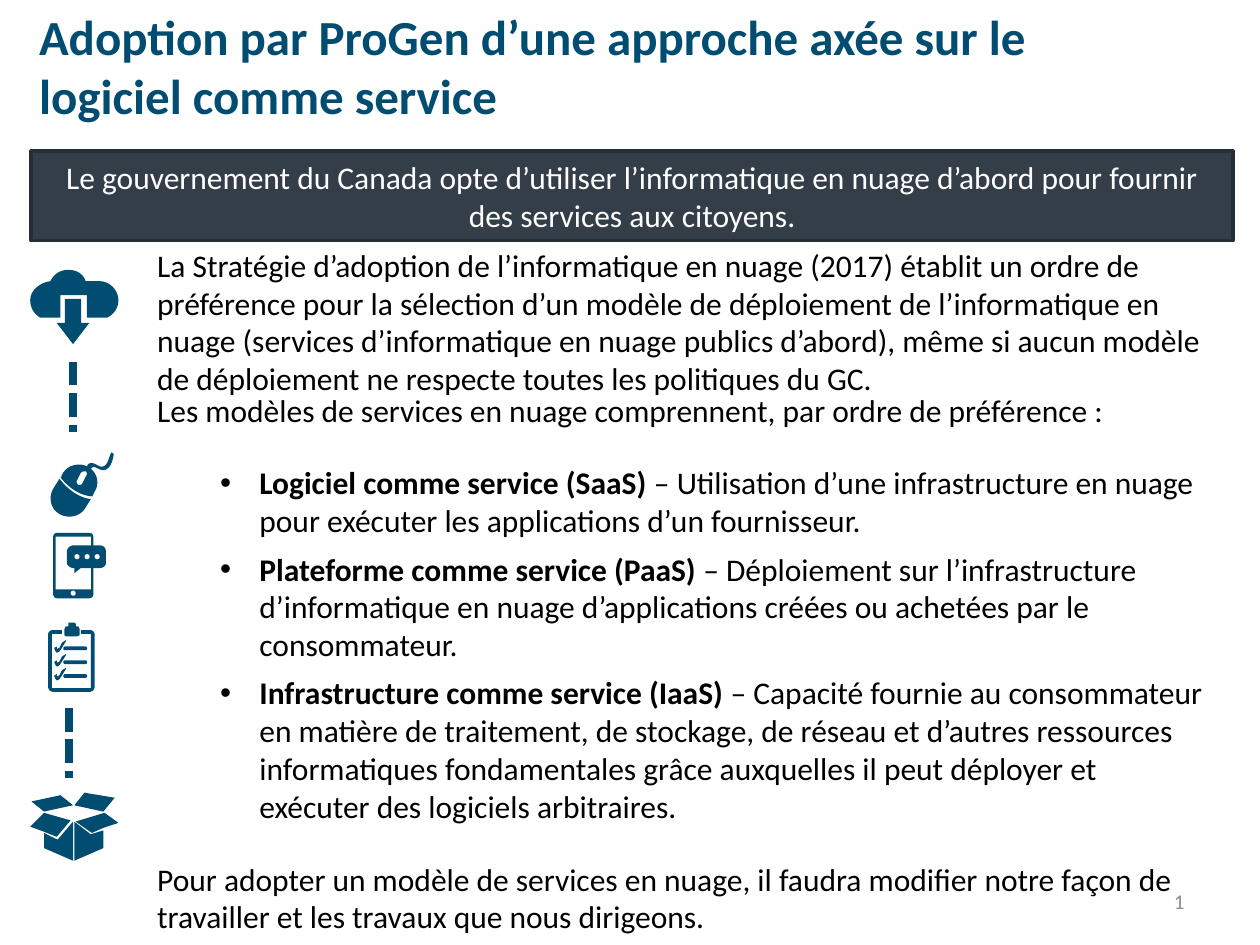
from lxml import etree
from pptx import Presentation
from pptx.dml.color import RGBColor
from pptx.enum.dml import MSO_LINE
from pptx.enum.shapes import MSO_CONNECTOR, MSO_SHAPE
from pptx.enum.text import MSO_ANCHOR, PP_ALIGN
from pptx.oxml.ns import qn
from pptx.util import Cm, Pt

RECT, ROUND = MSO_SHAPE.RECTANGLE, MSO_SHAPE.ROUNDED_RECTANGLE
OVAL, DOWN = MSO_SHAPE.OVAL, MSO_SHAPE.DOWN_ARROW
LEFT, MID, RIGHT = PP_ALIGN.LEFT, PP_ALIGN.CENTER, PP_ALIGN.RIGHT
TOP, CENTER = MSO_ANCHOR.TOP, MSO_ANCHOR.MIDDLE
STRAIGHT, DASH = MSO_CONNECTOR.STRAIGHT, MSO_LINE.SQUARE_DOT
FONT = "Calibri"
UNIT = Cm(0.0254)
COLORS = {"teal": "004D71", "dash": "004B6F", "slate": "333E48", "edge": "262E35",
          "white": "FFFFFF", "black": "000000", "gray": "8C8C8C"}

MODELS = [
    ("Logiciel comme service (SaaS)",
     " – Utilisation d’une infrastructure en nuage pour exécuter les applications d’un fournisseur."),
    ("Plateforme comme service (PaaS)",
     " – Déploiement sur l’infrastructure d’informatique en nuage d’applications créées ou achetées par le consommateur."),
    ("Infrastructure comme service (IaaS)",
     " – Capacité fournie au consommateur en matière de traitement, de stockage, de réseau et d’autres ressources "
     "informatiques fondamentales grâce auxquelles il peut déployer et exécuter des logiciels arbitraires."),
]


def color(name):
    return RGBColor.from_string(COLORS[name])


def style(par, size, tint, bold=False):
    for run in par.runs:
        font = run.font
        font.name, font.size, font.bold = FONT, Pt(size), bold
        font.color.rgb = color(tint)


def label(slide, box, text, size, tint, bold=False, align=LEFT, anchor=TOP, inset=True):
    frame = slide.shapes.add_textbox(*map(Cm, box)).text_frame
    frame.word_wrap = True
    frame.vertical_anchor = anchor
    if not inset:
        frame.margin_left = frame.margin_top = frame.margin_right = frame.margin_bottom = 0
    par = frame.paragraphs[0]
    par.text = text
    par.alignment = align
    style(par, size, tint, bold)
    return frame


def paint(shape, tint):
    shape.shadow.inherit = False
    shape.fill.solid()
    shape.fill.fore_color.rgb = color(tint)
    shape.line.fill.background()


def banner(slide, box, text):
    bar = slide.shapes.add_shape(RECT, *map(Cm, box))
    paint(bar, "slate")
    bar.line.color.rgb = color("edge")
    bar.line.width = Pt(2)
    frame = bar.text_frame
    frame.word_wrap = True
    frame.vertical_anchor = CENTER
    par = frame.paragraphs[0]
    par.text = text
    par.alignment = MID
    style(par, 18, "white")


def models(slide, box, intro, items, close):
    frame = label(slide, box, intro, 18, "black")
    frame.paragraphs[0].space_after = Pt(6)
    for i, (name, text) in enumerate(items):
        par = frame.add_paragraph()
        par.level = 1
        par.space_before = Pt(0 if i else 14)
        par.space_after = Pt(6)
        props = par._p.get_or_add_pPr()
        props.set("marL", str(Cm(2.06)))
        props.set("indent", str(-Cm(0.79)))
        etree.SubElement(props, qn("a:buFont")).set("typeface", "Arial")
        etree.SubElement(props, qn("a:buChar")).set("char", "•")
        par.add_run().text = name
        par.add_run().text = text
        style(par, 18, "black")
        par.runs[0].font.bold = True
    par = frame.add_paragraph()
    par.text = close
    par.space_before = Pt(14)
    style(par, 18, "black")


def trace(ring):
    points = [ring[0]]
    for step in ring[1:]:
        if len(step) == 2:
            points.append(step)
            continue
        curve = [points[-1], step[:2], step[2:4], step[4:]]
        for t in (k / 8 for k in range(1, 9)):
            mix = ((1 - t) ** 3, 3 * t * (1 - t) ** 2, 3 * t * t * (1 - t), t ** 3)
            points.append(tuple(sum(m * p[a] for m, p in zip(mix, curve)) for a in (0, 1)))
    return [(round(x * UNIT), round(y * UNIT)) for x, y in points]


def outline(group, x, y, *rings):
    lines = [trace(ring) for ring in rings]
    pen = group.shapes.build_freeform(*lines[0][0], scale=1.0)
    for i, line in enumerate(lines):
        if i:
            pen.move_to(*line[0])
        pen.add_line_segments(line[1:], close=True)
    paint(pen.convert_to_shape(Cm(x), Cm(y)), "teal")


def piece(group, x, y, kind, box, tint="teal"):
    left, top, wide, high = (round(n * UNIT) for n in box)
    shape = group.shapes.add_shape(kind, Cm(x) + left, Cm(y) + top, wide, high)
    paint(shape, tint)
    return shape


def cloud(slide, x, y):
    group = slide.shapes.add_group_shape()
    outline(group, x, y, [
        (8, 38), (3, 35, 0, 30, 0, 24), (0, 16, 8, 10, 16, 9), (19, 3, 24, 0, 30, 0),
        (37, 0, 42, 3, 44, 9), (55, 9), (63, 9, 70, 16, 70, 24), (70, 30, 67, 35, 61, 38),
        (45, 38), (45, 20), (24, 20), (24, 38)])
    arrow = piece(group, x, y, DOWN, (21, 23, 26, 36))
    arrow.adjustments[1] = 0.65


def mouse(slide, x, y):
    group = slide.shapes.add_group_shape()
    outline(group, x, y, [
        (9, 21), (4, 29), (0, 36, 2, 45, 9, 49), (16, 53, 25, 51, 29, 45),
        (34, 37), (30, 37, 19, 34, 9, 21)])
    outline(group, x, y, [
        (50, 0), (49, 3, 47, 8, 47, 8), (44, 14, 39, 10, 39, 10), (34, 7, 31, 9, 31, 11),
        (24, 8, 16, 10, 12, 16), (10, 20), (13, 24, 22, 34, 35, 35), (37, 31),
        (41, 25, 39, 17, 34, 13), (35, 11, 38, 12, 38, 12), (47, 18, 50, 9, 50, 9),
        (50, 9, 52, 5, 52, 1)],
        [(27, 25), (26, 26, 25, 26, 24, 26), (23, 25, 22, 23, 23, 22), (26, 16),
         (27, 15, 29, 15, 30, 15), (31, 16, 31, 18, 30, 19)])


def phone(slide, x, y):
    group = slide.shapes.add_group_shape()
    piece(group, x, y, ROUND, (0, 0, 32, 52)).adjustments[0] = 0.1
    piece(group, x, y, RECT, (2, 3, 28, 42), "white")
    piece(group, x, y, OVAL, (14, 46, 4, 4), "white")
    outline(group, x, y, [
        (37, 10), (16, 10), (14, 10, 11, 12, 11, 15), (11, 24), (11, 26, 14, 28, 16, 28),
        (17, 28), (17, 32), (22, 28), (37, 28), (40, 28, 42, 26, 42, 24), (42, 15),
        (42, 12, 40, 10, 37, 10)])
    for i in range(3):
        piece(group, x, y, OVAL, (17 + 8 * i, 17, 4, 4), "white")


def tasks(slide, x, y):
    group = slide.shapes.add_group_shape()
    outline(group, x, y, [
        (33, 6), (26, 6), (26, 9), (34, 9), (34, 52), (3, 52), (3, 9), (11, 9), (11, 6),
        (4, 6), (2, 6, 0, 7, 0, 10), (0, 51), (0, 53, 2, 55, 4, 55), (33, 55),
        (35, 55, 37, 53, 37, 51), (37, 10), (37, 7, 35, 6, 33, 6)])
    outline(group, x, y, [
        (14, 11), (23, 11), (25, 10), (25, 5), (24, 3), (22, 3), (22, 1), (21, 0),
        (16, 0), (16, 3), (14, 3), (13, 5), (13, 10)])
    tick = [(14, 15), (11, 20), (9, 23), (7, 24), (6, 23), (5, 21), (5, 20), (7, 19),
            (7, 21), (9, 20), (11, 16), (14, 14)]
    for drop in (0, 11, 22):
        piece(group, x, y, ROUND, (12, 19 + drop, 19, 3)).adjustments[0] = 0.5
        outline(group, x, y, [(a, b + drop) for a, b in tick])


def crate(slide, x, y):
    group = slide.shapes.add_group_shape()
    for ring in (
            [(35, 10), (43, 0), (67, 4), (58, 15)],
            [(1, 7), (11, 15), (34, 10), (24, 2)],
            [(22, 37), (21, 37), (11, 32), (11, 44), (34, 54), (34, 23)],
            [(11, 16), (0, 27), (11, 31), (21, 35), (32, 22)],
            [(35, 23), (35, 54), (58, 44), (58, 30), (48, 33)],
            [(59, 16), (36, 23), (49, 32), (58, 28), (70, 24)]):
        outline(group, x, y, ring)


def dashes(slide, x, y, high):
    line = slide.shapes.add_connector(STRAIGHT, Cm(x), Cm(y), Cm(x), Cm(y + high))
    line.line.color.rgb = color("dash")
    line.line.width = Pt(4.5)
    line.line.dash_style = DASH
    etree.SubElement(line._element.spPr, qn("a:effectLst"))


def main():
    deck = Presentation()
    deck.slide_width, deck.slide_height = Cm(25.4), Cm(19.05)
    slide = deck.slides.add_slide(deck.slide_layouts[6])
    label(slide, (18.21, 17.65, 5.92, 1.02), "1", 12, "gray", align=RIGHT, anchor=CENTER)
    label(slide, (0.79, 0.13, 21.11, 1.35),
          "Adoption par ProGen d’une approche axée sur le logiciel comme service",
          28, "teal", bold=True, inset=False)
    models(slide, (2.92, 7.75, 21.69, 11.38),
           "Les modèles de services en nuage comprennent, par ordre de préférence :", MODELS,
           "Pour adopter un modèle de services en nuage, il faudra modifier notre façon de "
           "travailler et les travaux que nous dirigeons.")
    banner(slide, (0.63, 3.05, 24.23, 1.8),
           "Le gouvernement du Canada opte d’utiliser l’informatique en nuage d’abord "
           "pour fournir des services aux citoyens.")
    cloud(slide, 0.61, 5.44)
    label(slide, (2.92, 4.83, 21.92, 3.33),
          "La Stratégie d’adoption de l’informatique en nuage (2017) établit un ordre de préférence "
          "pour la sélection d’un modèle de déploiement de l’informatique en nuage (services "
          "d’informatique en nuage publics d’abord), même si aucun modèle de déploiement ne "
          "respecte toutes les politiques du GC.", 18, "black")
    dashes(slide, 1.47, 7.29, 1.42)
    mouse(slide, 0.97, 9.12)
    crate(slide, 0.61, 15.98)
    phone(slide, 1.07, 10.74)
    tasks(slide, 0.97, 12.55)
    dashes(slide, 1.4, 14.27, 1.42)
    deck.save("out.pptx")


if __name__ == "__main__":
    main()
